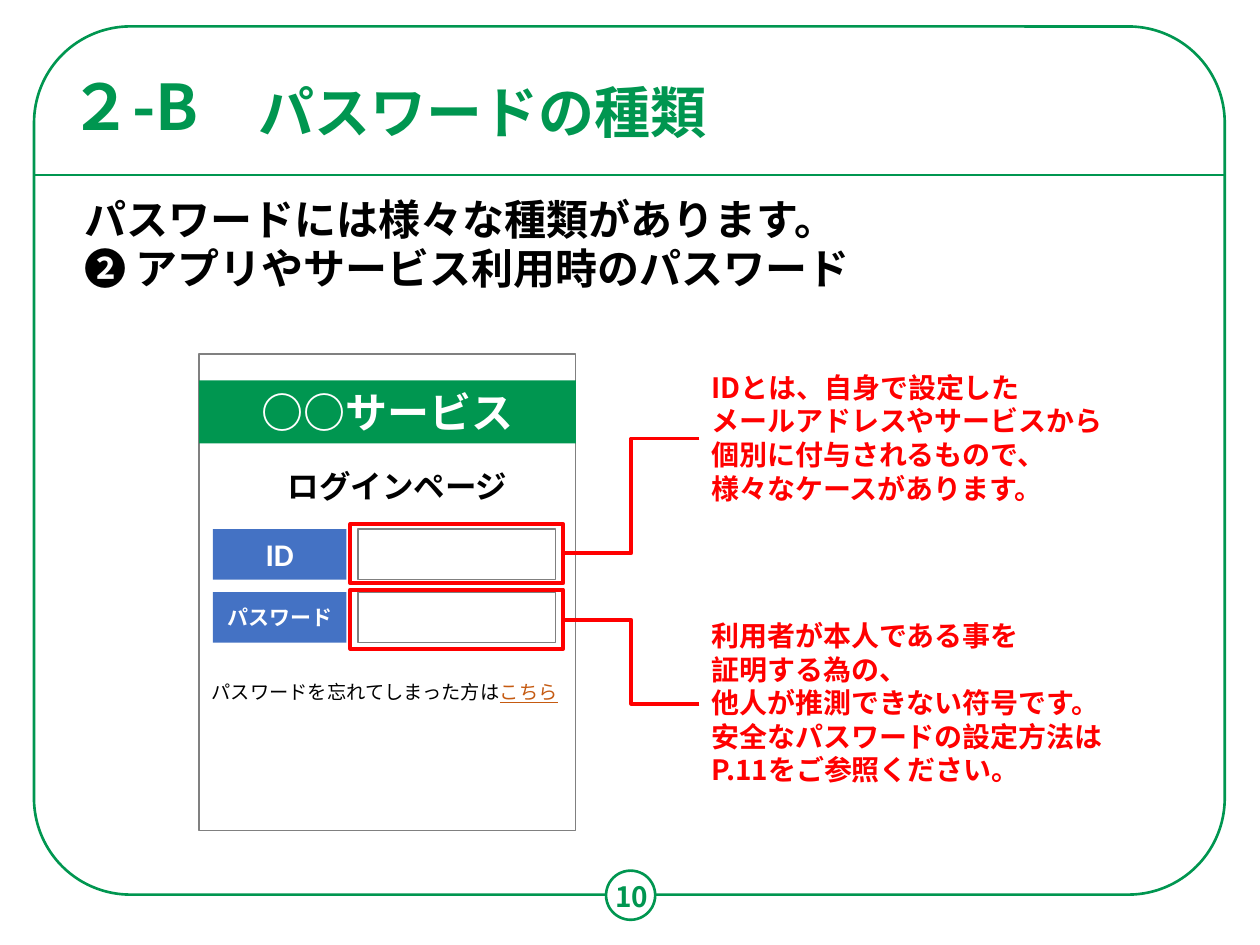
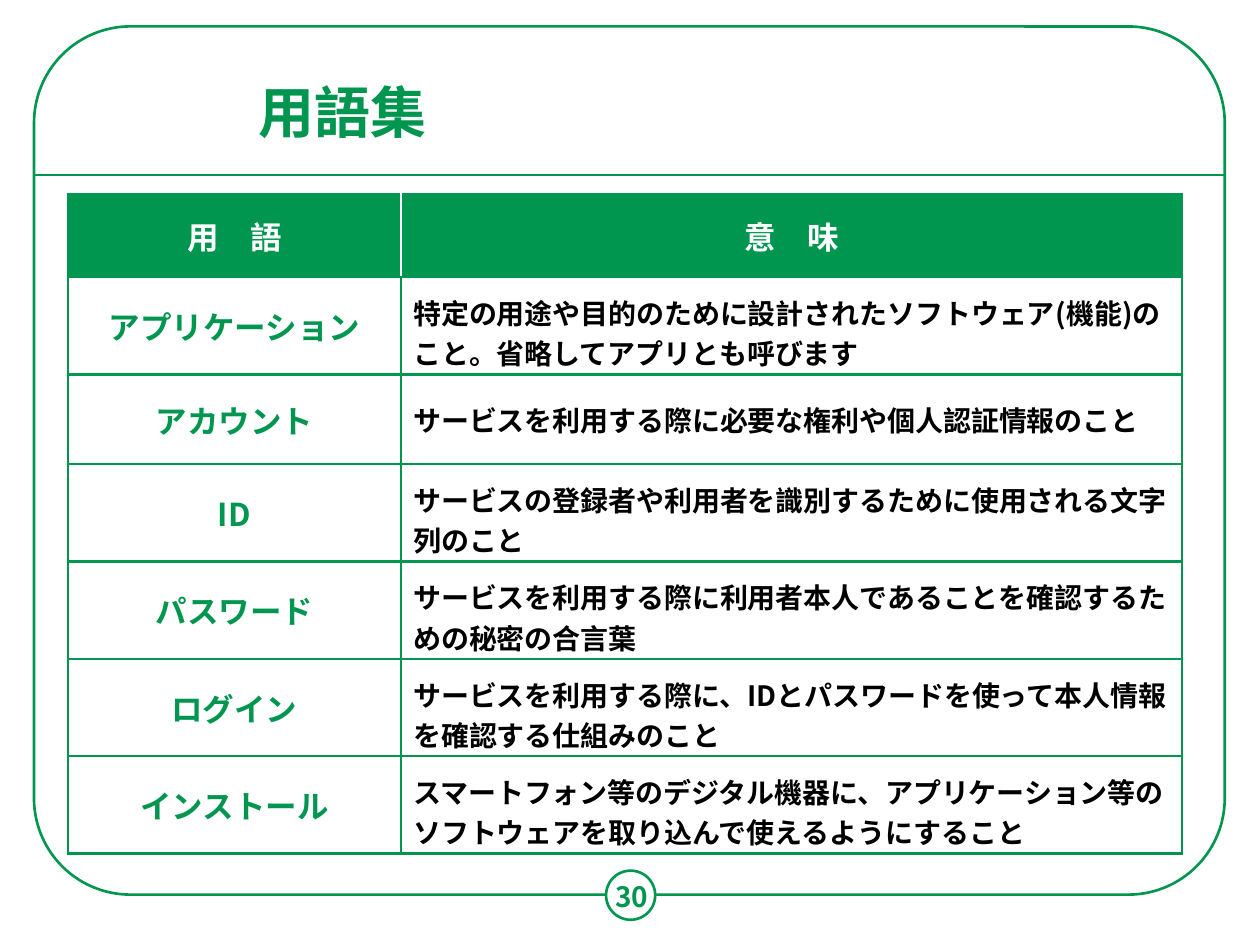
import pptx
import pptx.util
import pptx.dml.color
import pptx.enum.shapes
import pptx.enum.text
import pptx.oxml
import pptx.oxml.ns

Inches, Pt = pptx.util.Inches, pptx.util.Pt
SHAPE = pptx.enum.shapes.MSO_SHAPE
CONNECTOR = pptx.enum.shapes.MSO_CONNECTOR
ALIGN = pptx.enum.text.PP_ALIGN
ANCHOR = pptx.enum.text.MSO_ANCHOR

COLORS = {
    "green": "009650", "red": "FF0000", "blue": "4472C4", "gray": "808080",
    "link": "C55A11", "black": "000000", "white": "FFFFFF",
}
JAPANESE, LATIN = "Noto Sans CJK JP", "Calibri"

GLOSSARY = [
    ("用　語", "意　味"),
    ("アプリケーション",
     "特定の用途や目的のために設計されたソフトウェア(機能)のこと。省略してアプリとも呼びます"),
    ("アカウント", "サービスを利用する際に必要な権利や個人認証情報のこと"),
    ("ID", "サービスの登録者や利用者を識別するために使用される文字列のこと"),
    ("パスワード", "サービスを利用する際に利用者本人であることを確認するための秘密の合言葉"),
    ("ログイン", "サービスを利用する際に、IDとパスワードを使って本人情報を確認する仕組みのこと"),
    ("インストール",
     "スマートフォン等のデジタル機器に、アプリケーション等のソフトウェアを取り込んで使えるようにすること"),
]
GLOSSARY_COLUMNS = (2.64, 6.2)
GLOSSARY_ROWS = (0.66, 0.68, 0.71, 0.66, 0.66, 0.66, 0.66)


def rgb(color):
    return pptx.dml.color.RGBColor.from_string(COLORS[color])


def box(left, top, width, height):
    return Inches(left), Inches(top), Inches(width), Inches(height)


def add_run(paragraph, text, size=16, color="black", bold=True, font=JAPANESE,
            underline=None):
    run = paragraph.add_run()
    run.text = text
    run.font.size = Pt(size)
    run.font.bold = bold
    run.font.underline = underline
    run.font.name = font
    run.font.color.rgb = rgb(color)
    east_asian = pptx.oxml.parse_xml(
        f'<a:ea {pptx.oxml.ns.nsdecls("a")} typeface="{JAPANESE}"/>')
    run.font._element.append(east_asian)


def write(frame, text, align=ALIGN.LEFT, line_spacing=None, gap=0, **run_format):
    """Fill a text frame, one paragraph for each line of text."""
    for number, line in enumerate(text.split("\n")):
        paragraph = frame.add_paragraph() if number else frame.paragraphs[0]
        paragraph.alignment = align
        paragraph.space_before = Pt(gap if number else 0)
        if line_spacing:
            paragraph.line_spacing = line_spacing
        add_run(paragraph, line, **run_format)


def add_text(slide, area, text, anchor=ANCHOR.TOP, wrap=True, **text_format):
    frame = slide.shapes.add_textbox(*box(*area)).text_frame
    frame.word_wrap = wrap
    frame.vertical_anchor = anchor
    write(frame, text, **text_format)
    return frame


def fill_placeholder(placeholder, area, text, anchor, wrap=True, **text_format):
    placeholder.left, placeholder.top, placeholder.width, placeholder.height = box(*area)
    frame = placeholder.text_frame
    frame.auto_size = pptx.enum.text.MSO_AUTO_SIZE.NONE
    frame.word_wrap = wrap
    frame.vertical_anchor = anchor
    write(frame, text, **text_format)


def add_panel(slide, area, kind=SHAPE.RECTANGLE, fill=None, line=None, weight=1.5,
              text=None, **text_format):
    panel = slide.shapes.add_shape(kind, *box(*area))
    panel.shadow.inherit = False
    if fill:
        panel.fill.solid()
        panel.fill.fore_color.rgb = rgb(fill)
    else:
        panel.fill.background()
    if line:
        panel.line.color.rgb = rgb(line)
        panel.line.width = Pt(weight)
    else:
        panel.line.fill.background()
    if text:
        panel.text_frame.vertical_anchor = ANCHOR.MIDDLE
        write(panel.text_frame, text, align=ALIGN.CENTER, color="white",
              font=LATIN, **text_format)
    return panel


def add_line(slide, kind, start, end, color, weight):
    line = slide.shapes.add_connector(
        kind, *(Inches(value) for value in (*start, *end)))
    line.line.color.rgb = rgb(color)
    line.line.width = Pt(weight)
    line._element.spPr.append(
        pptx.oxml.parse_xml(f'<a:effectLst {pptx.oxml.ns.nsdecls("a")}/>'))


def add_framed_slide(deck, title, title_width, page):
    """Add a slide with the green frame, title, rule and page number."""
    slide = deck.slides.add_slide(deck.slide_layouts[0])
    frame = add_panel(slide, (0.27, 0.21, 9.45, 6.89), SHAPE.ROUNDED_RECTANGLE,
                      line="green")
    frame.adjustments[0] = 0.111
    add_panel(slide, (4.81, 6.91, 0.39, 0.39), SHAPE.OVAL, fill="white", line="green")
    add_line(slide, CONNECTOR.STRAIGHT, (0.27, 1.39), (9.72, 1.39), "green", 1.5)
    add_text(slide, (4.62, 6.92, 0.79, 0.39), page, anchor=ANCHOR.MIDDLE,
             align=ALIGN.CENTER, color="green")
    fill_placeholder(slide.shapes.title, (1.95, 0.26, title_width, 0.94), title,
                     ANCHOR.BOTTOM, wrap=False, size=32, color="green")
    return slide


def add_login_page(slide):
    add_panel(slide, (1.58, 2.81, 2.99, 3.78), line="gray", weight=0.75)
    add_panel(slide, (1.58, 3.02, 2.99, 0.5), fill="green", text="○○サービス", size=24)
    add_text(slide, (2.17, 3.66, 1.97, 0.4), "ログインページ", wrap=False,
             align=ALIGN.CENTER, size=18, font=LATIN)
    for top, label, size in ((4.2, "ID", 18), (4.7, "パスワード", 12)):
        add_panel(slide, (1.69, top, 1.06, 0.4), fill="blue", text=label, size=size)
        add_panel(slide, (2.84, top, 1.57, 0.4), fill="white", line="gray", weight=1)
    for top in (4.16, 4.68):
        add_panel(slide, (2.78, top, 1.69, 0.47), line="red", weight=2.25)
    reminder = add_text(slide, (1.58, 5.35, 2.98, 0.29),
                        "パスワードを忘れてしまった方は", wrap=False,
                        size=11, bold=False, font=LATIN)
    add_run(reminder.paragraphs[0], "こちら", size=11, color="link", bold=False,
            font=LATIN, underline=True)


def add_callout(slide, top, height, text, field_middle):
    """Add a red explanation joined to the middle of a login field."""
    left = 5.55
    add_text(slide, (left, top, 3.54, height), text, color="red")
    add_line(slide, CONNECTOR.ELBOW, (left, top + height / 2), (4.47, field_middle),
             "red", 2.25)


def set_borders(cell, **sides):
    """Draw cell borders; sides are L, R, T and B with colour names."""
    for side, color in sides.items():
        cell._tc.get_or_add_tcPr().append(pptx.oxml.parse_xml(
            f'<a:ln{side} {pptx.oxml.ns.nsdecls("a")} w="{Pt(1.5)}"><a:solidFill>'
            f'<a:srgbClr val="{COLORS[color]}"/></a:solidFill></a:ln{side}>'))


def add_glossary(slide):
    area = box(0.54, 1.54, sum(GLOSSARY_COLUMNS), sum(GLOSSARY_ROWS))
    table = slide.shapes.add_table(len(GLOSSARY), len(GLOSSARY_COLUMNS), *area).table
    table.horz_banding = False
    for column, width in zip(table.columns, GLOSSARY_COLUMNS):
        column.width = Inches(width)
    for row_number, entry in enumerate(GLOSSARY):
        table.rows[row_number].height = Inches(GLOSSARY_ROWS[row_number])
        header = row_number == 0
        divider = "white" if header else "green"
        for column_number, text in enumerate(entry):
            cell = table.cell(row_number, column_number)
            is_term = column_number == 0
            cell.vertical_anchor = ANCHOR.MIDDLE
            set_borders(cell, L="green" if is_term else divider,
                        R=divider if is_term else "green", T="green", B="green")
            if header:
                cell.fill.solid()
                cell.fill.fore_color.rgb = rgb("green")
                color = "white"
            else:
                cell.fill.background()
                cell.margin_top = cell.margin_bottom = Inches(0.12)
                color = "green" if is_term else "black"
            centered = header or is_term
            write(cell.text_frame, text, color=color, size=18 if centered else 16,
                  align=ALIGN.CENTER if centered else ALIGN.LEFT)


def build_password_slide(deck):
    slide = add_framed_slide(deck, "パスワードの種類", 3.79, "10")
    fill_placeholder(
        slide.placeholders[1], (0.57, 1.58, 9.17, 0.93),
        "パスワードには様々な種類があります。\n❷ アプリやサービス利用時のパスワード",
        ANCHOR.TOP, size=24, line_spacing=0.75, gap=6.5)
    add_text(slide, (0.45, 0.6, 1.38, 0.59), "２-B", anchor=ANCHOR.BOTTOM,
             size=36, color="green", line_spacing=0.9)
    add_login_page(slide)
    add_callout(slide, 2.89, 1.18,
                "IDとは、自身で設定した\nメールアドレスやサービスから\n"
                "個別に付与されるもので、\n様々なケースがあります。", 4.39)
    add_callout(slide, 4.86, 1.45,
                "利用者が本人である事を\n証明する為の、\n他人が推測できない符号です。\n"
                "安全なパスワードの設定方法は\nP.11をご参照ください。", 4.92)


def build_glossary_slide(deck):
    slide = add_framed_slide(deck, "用語集", 1.55, "30")
    subtitle = slide.placeholders[1].element
    subtitle.getparent().remove(subtitle)
    add_glossary(slide)


def main():
    deck = pptx.Presentation()
    deck.slide_width, deck.slide_height = Inches(10), Inches(7.5)
    build_password_slide(deck)
    build_glossary_slide(deck)
    deck.save("out.pptx")


if __name__ == "__main__":
    main()
